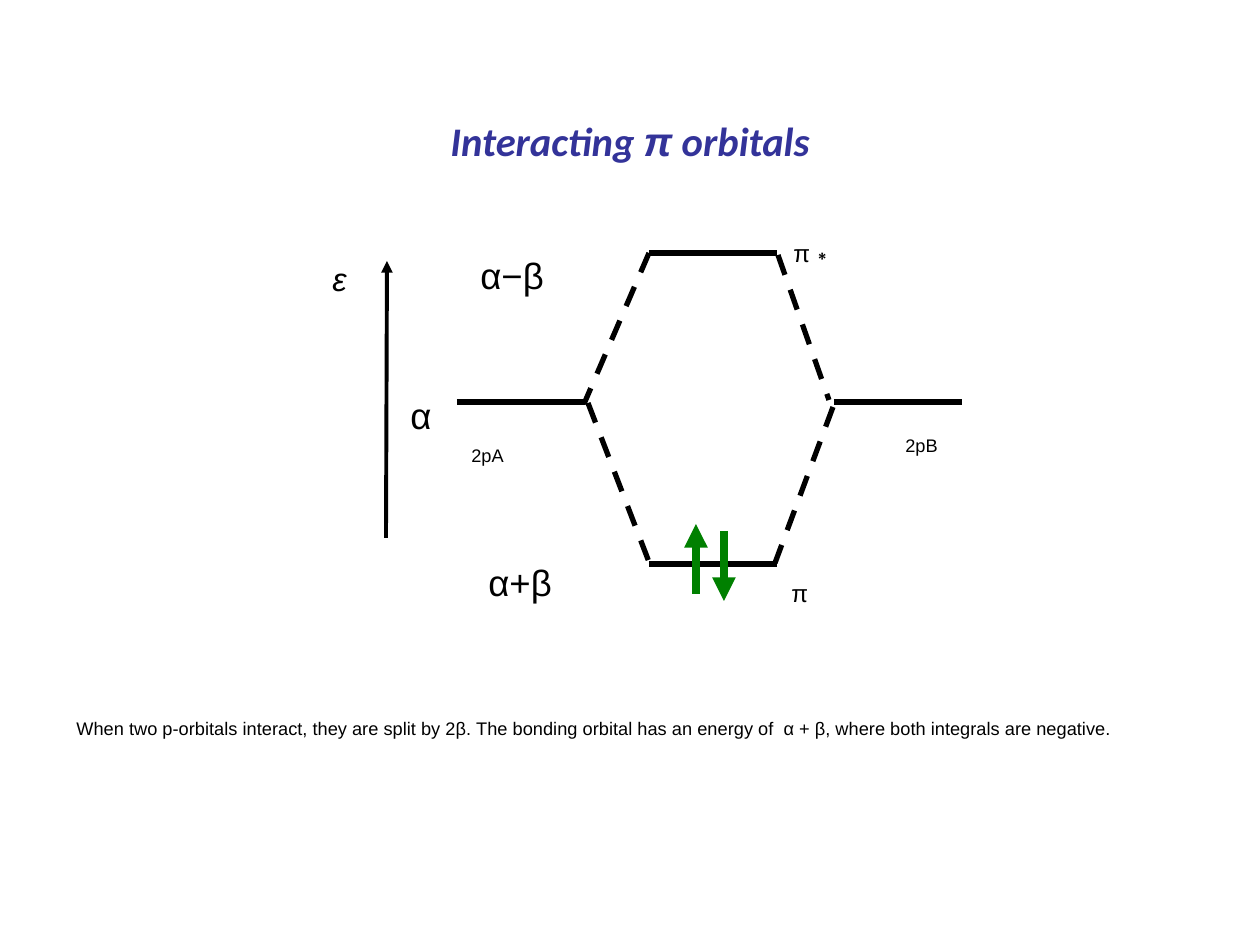
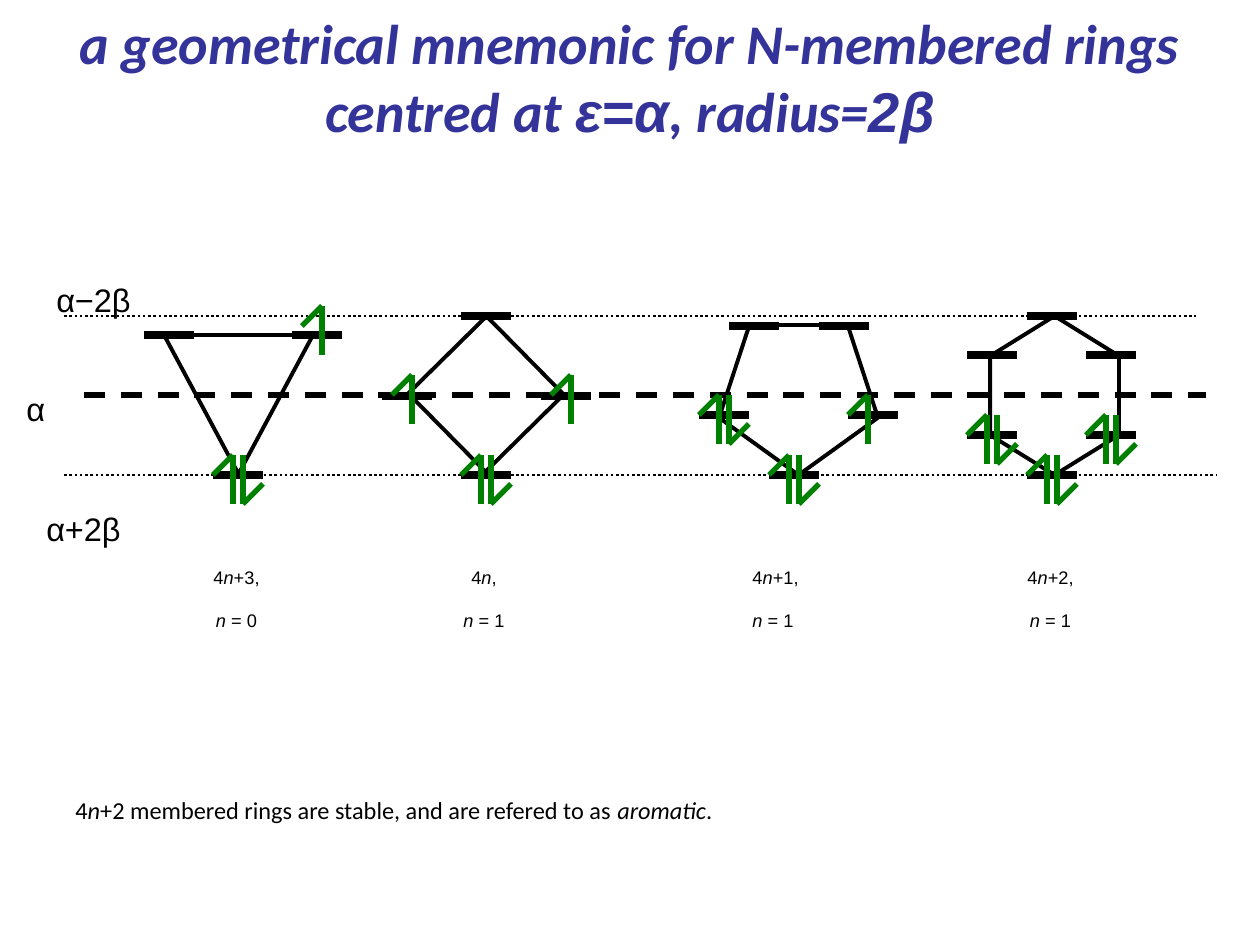
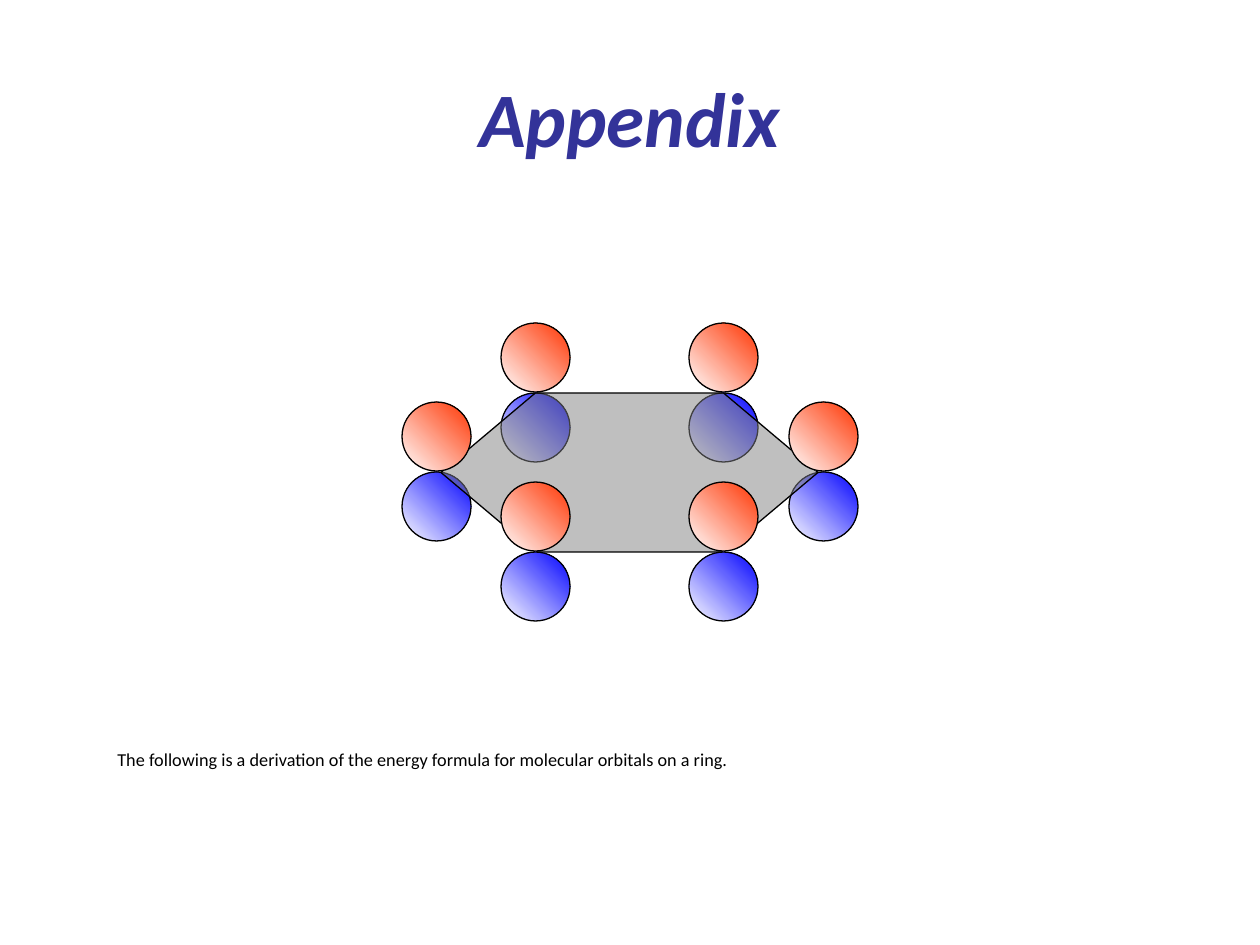
from lxml import etree
from pptx import Presentation
from pptx.dml.color import RGBColor
from pptx.enum.dml import MSO_LINE
from pptx.enum.shapes import MSO_CONNECTOR, MSO_SHAPE
from pptx.enum.text import MSO_ANCHOR, MSO_AUTO_SIZE, PP_ALIGN
from pptx.oxml.ns import qn
from pptx.util import Pt

EMU_PER_PX = 914400 / 126
STRAIGHT = MSO_CONNECTOR.STRAIGHT
DASH, DOT = MSO_LINE.DASH, MSO_LINE.ROUND_DOT
TRIANGLE, PENTAGON = MSO_SHAPE.ISOSCELES_TRIANGLE, MSO_SHAPE.REGULAR_PENTAGON
HEXAGON, SQUARE, CIRCLE = MSO_SHAPE.HEXAGON, MSO_SHAPE.RECTANGLE, MSO_SHAPE.OVAL
LEFT, CENTER = PP_ALIGN.LEFT, PP_ALIGN.CENTER
MIDDLE = MSO_ANCHOR.MIDDLE
FIT_SHAPE, NO_FIT = MSO_AUTO_SIZE.SHAPE_TO_FIT_TEXT, MSO_AUTO_SIZE.NONE

BLACK, WHITE, GREEN, GREY = "000000", "FFFFFF", "008000", "808080"
NAVY, RED, BLUE = "333399", "FF3300", "0000FF"
TITLE_FORMAT = {"name": "Calibri", "bold": True, "italic": True}
ARIAL = {"name": "Arial"}
CALIBRI = {"name": "Calibri"}
ITALIC = {"italic": True}
LOWERED = "-25000"
BREAK = None

LEVEL_WIDTH = 50
LOBE = 69
LOBE_STEP = 70

RINGS = [
    (TRIANGLE, (164, 335, 149, 139), 180),
    (PENTAGON, (719, 325, 159, 150), 180),
    (HEXAGON, (975, 331, 159, 129), 90),
    (SQUARE, (431, 339, 110, 110), 45.4),
]
PAIRED_LEVELS = [(461, 475), (213, 475), (769, 475), (1027, 475),
                 (967, 435), (1086, 435), (699, 415)]
OTHER_LEVELS = [(292, 335), (144, 335), (382, 396), (541, 396), (461, 316),
                (729, 326), (819, 326), (848, 415),
                (967, 355), (1086, 355), (1027, 316)]
SINGLE_TIPS = [(868, 395), (412, 375), (571, 375), (322, 306)]
RING_CAPTIONS = [
    ((435, 539, 98, 89), "n", ",", "= 1", CENTER),
    ((184, 539, 105, 88), "n", "+3,", "= 0", CENTER),
    ((740, 539, 105, 88), "n+", "1,", "= 1", LEFT),
    ((997, 539, 107, 88), "n+", "2,", "= 1", CENTER),
]


def px(*lengths):
    return [round(length * EMU_PER_PX) for length in lengths]


def rgb(hex_code):
    return RGBColor.from_string(hex_code)


def set_values(target, values):
    for key, value in values.items():
        setattr(target, key, value)


def write(frame, paragraphs, size, base, color=BLACK, align=LEFT, baseline=LOWERED):
    for index, fragments in enumerate(paragraphs):
        paragraph = frame.paragraphs[0] if index == 0 else frame.add_paragraph()
        paragraph.alignment = align
        for words, changes in fragments:
            if words is BREAK:
                paragraph.add_line_break()
                continue
            run = paragraph.add_run()
            run.text = words
            set_values(run.font, {"size": Pt(size), **base, **changes})
            run.font.color.rgb = rgb(color)
            if baseline:
                run.font._element.set("baseline", baseline)


def add_titled_slide(deck, box, fragments, size, baseline=None):
    slide = deck.slides.add_slide(deck.slide_layouts[5])
    title = slide.shapes.title
    set_values(title, dict(zip(("left", "top", "width", "height"), px(*box))))
    set_values(title.text_frame, {"auto_size": NO_FIT, "vertical_anchor": MIDDLE})
    write(title.text_frame, [fragments], size, TITLE_FORMAT, NAVY, CENTER, baseline)
    return slide


def add_text(slide, box, paragraphs, size, base=ARIAL, align=LEFT, wrap=False):
    frame = slide.shapes.add_textbox(*px(*box)).text_frame
    set_values(frame, {"word_wrap": wrap, "auto_size": FIT_SHAPE})
    write(frame, paragraphs, size, base, align=align)


def add_label(slide, box, words, size, changes=ARIAL):
    add_text(slide, box, [[(words, changes)]], size)


def add_line(shapes, start, end, width=3, color=BLACK, dash=None, arrow=False):
    connector = shapes.add_connector(STRAIGHT, *px(*start, *end))
    connector.line.color.rgb = rgb(color)
    set_values(connector.line, {"width": Pt(width), "dash_style": dash})
    if arrow:
        ln = connector.line._get_or_add_ln()
        etree.SubElement(ln, qn("a:tailEnd"), type="triangle")
    etree.SubElement(connector._element.spPr, qn("a:effectLst"))


def add_outline(shapes, kind, box, width):
    shape = shapes.add_shape(kind, *px(*box))
    shape.shadow.inherit = False
    shape.fill.background()
    shape.line.color.rgb = rgb(BLACK)
    shape.line.width = Pt(width)
    return shape


def add_half_arrow(slide, x, y, direction):
    shapes = slide.shapes.add_group_shape().shapes
    add_line(shapes, (x, y), (x, y + 49 * direction), color=GREEN)
    add_line(shapes, (x, y), (x - 20 * direction, y + 20 * direction), color=GREEN)


def add_lobe(shapes, x, y, color):
    lobe = add_outline(shapes, CIRCLE, (x, y, LOBE, LOBE), 0.75)
    lobe.fill.gradient()
    lobe.fill.gradient_angle = 45
    for stop, shade in zip(lobe.fill.gradient_stops, (WHITE, color)):
        stop.color.rgb = rgb(shade)


def add_orbital(slide, x, y):
    shapes = slide.shapes.add_group_shape().shapes
    add_lobe(shapes, x, y - LOBE_STEP, RED)
    add_lobe(shapes, x, y, BLUE)


def build_interaction(deck):
    slide = add_titled_slide(
        deck, (63, 38, 1134, 158),
        [("Interacting ", {}), ("π", ARIAL), (" orbitals", {})], 40, LOWERED)
    for x, y in [(457, 402), (649, 253), (649, 564), (834, 402)]:
        add_line(slide.shapes, (x, y), (x + 128, y))
    for start, end in [((649, 253), (584, 404)), ((833, 407), (775, 563)),
                       ((588, 403), (649, 562)), ((778, 255), (829, 400))]:
        add_line(slide.shapes, start, end, dash=DASH)
    add_line(slide.shapes, (386, 538), (387, 261), 2.25, arrow=True)
    add_line(slide.shapes, (724, 531), (724, 601), 4.5, GREEN, arrow=True)
    add_line(slide.shapes, (696, 594), (696, 524), 4.5, GREEN, arrow=True)
    for box, atom in [((459, 417, 74, 50), "A"), ((893, 407, 74, 50), "B")]:
        add_text(slide, box, [[("2p", {}), (atom, {})]], 18)
    add_label(slide, (476, 512, 135, 88), "α+β", 36)
    add_label(slide, (468, 205, 135, 88), "α−β", 36)
    add_label(slide, (398, 345, 66, 88), "α", 36)
    add_label(slide, (320, 215, 50, 79), "ε", 32, ITALIC)
    add_label(slide, (779, 544, 48, 63), "π", 24)
    add_label(slide, (781, 204, 69, 63), "π∗", 24)
    add_text(slide, (64, 690, 1132, 88), [[(
        "When two p-orbitals interact, they are split by 2β. The bonding orbital "
        "has an energy of  α + β, where both integrals are negative.", {})]],
        18, wrap=True)


def build_mnemonic(deck):
    slide = add_titled_slide(
        deck, (0, -3, 1260, 158),
        [("a geometrical mnemonic for N-membered rings", {}), (BREAK, {}),
         ("centred at ", {}), ("ε=α", ARIAL), (", radius=", {}), ("2β", ARIAL)], 32)
    for kind, box, turn in RINGS:
        ring = add_outline(slide.shapes, kind, box, 2.25)
        ring.rotation = turn
        if kind == HEXAGON:
            ring.adjustments[0] = 0.31
    add_line(slide.shapes, (84, 395), (1206, 395), dash=DASH)
    add_line(slide.shapes, (64, 475), (1216, 475), 1.5, dash=DOT)
    add_line(slide.shapes, (64, 316), (1196, 316), 1.5, dash=DOT)
    add_label(slide, (34, 465, 150, 79), "α+2β", 32)
    add_label(slide, (44, 236, 150, 79), "α−2β", 32)
    add_label(slide, (14, 345, 60, 79), "α", 32)
    for x, y in PAIRED_LEVELS + OTHER_LEVELS:
        add_line(slide.shapes, (x, y), (x + LEVEL_WIDTH, y), 4.5)
    for x, y in PAIRED_LEVELS:
        add_half_arrow(slide, x + 20, y - 20, 1)
        add_half_arrow(slide, x + 30, y + 29, -1)
    for x, y in SINGLE_TIPS:
        add_half_arrow(slide, x, y, 1)
    for box, variable, remainder, value, align in RING_CAPTIONS:
        add_text(slide, box,
                 [[("4", {}), (variable, ITALIC), (remainder, {})],
                  [("n ", ITALIC), (value, {})]], 18, align=align)
    add_text(slide, (63, 761, 1135, 63),
             [[("4", {}), ("n", ITALIC),
               ("+2 membered rings are stable, and are refered to as ", {}),
               ("aromatic", ITALIC), (".", {})]], 24, CALIBRI)


def build_appendix(deck):
    slide = add_titled_slide(deck, (63, 38, 1134, 158), [("Appendix", {})], 44)
    side_xs, inner_xs = (402, 789), (501, 689)
    back_y, side_y, front_y = 393, 472, 552
    for x in side_xs:
        add_lobe(slide.shapes, x, side_y, BLUE)
    for x in inner_xs:
        add_orbital(slide, x, back_y)
    plane = add_outline(slide.shapes, HEXAGON, (441, 393, 377, 159), 0.75)
    plane.adjustments[0] = 0.594
    plane.fill.solid()
    plane.fill.fore_color.rgb = rgb(GREY)
    tint = plane._element.spPr.find(qn("a:solidFill")).find(qn("a:srgbClr"))
    etree.SubElement(tint, qn("a:alpha"), val="50000")
    for x in side_xs:
        add_lobe(slide.shapes, x, side_y - LOBE_STEP, RED)
    for x in inner_xs:
        add_orbital(slide, x, front_y)
    add_text(slide, (105, 721, 1084, 50), [[(
        "The following is a derivation of the energy formula for molecular "
        "orbitals on a ring.", {})]], 18, CALIBRI)


def main():
    deck = Presentation()
    deck.slide_width, deck.slide_height = px(1260, 945)
    build_interaction(deck)
    build_mnemonic(deck)
    build_appendix(deck)
    deck.save("out.pptx")


if __name__ == "__main__":
    main()
